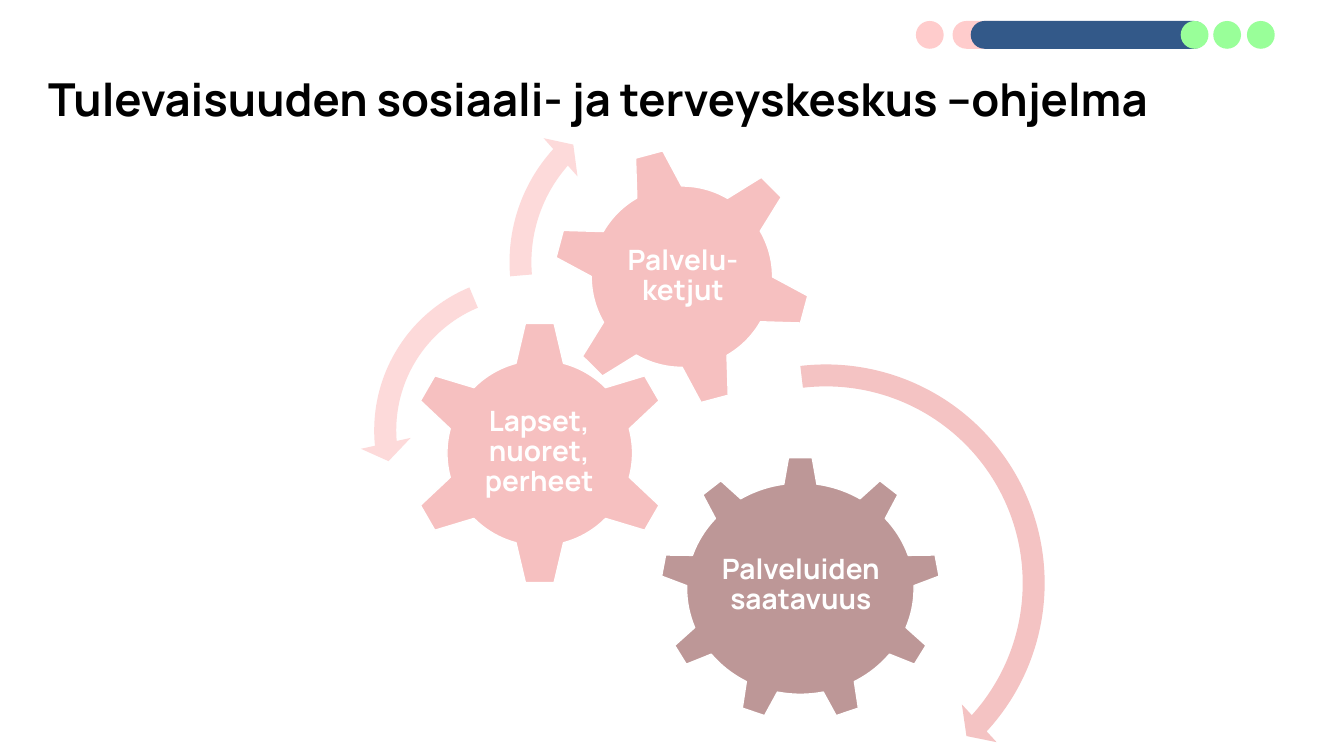
from dataclasses import dataclass

from pptx import Presentation
from pptx.dml.color import RGBColor
from pptx.enum.shapes import MSO_SHAPE
from pptx.enum.text import MSO_ANCHOR, PP_ALIGN
from pptx.shapes.autoshape import Shape
from pptx.slide import Slide
from pptx.util import Inches, Length, Pt

CELL = Inches(0.1)
COLUMNS, ROWS = 133.33, 75
FONT = "Manrope"
COLORS = {
    "white": "FFFFFF",
    "black": "000000",
    "pink": "FFCCCC",
    "navy": "335989",
    "green": "99FF99",
    "gear": "F6C0C0",
    "dark gear": "BD9797",
    "arrow": "F4C3C3",
    "pale arrow": "FDDADA",
}


@dataclass(frozen=True)
class Area:
    """A rectangle in columns and rows of the slide grid."""

    column: float
    row: float
    columns: float
    rows: float

    def lengths(self) -> tuple[Length, ...]:
        """Return left, top, width and height."""
        cells = (self.column, self.row, self.columns, self.rows)
        return tuple(Length(round(cell * CELL)) for cell in cells)


@dataclass(frozen=True)
class Pill:
    """A round-ended piece of the header ornament."""

    column: float
    columns: float
    color: str


@dataclass(frozen=True)
class Gear:
    """A cogwheel with its caption."""

    kind: MSO_SHAPE
    area: Area
    color: str
    caption: str
    caption_area: Area
    rotation: float = 0


@dataclass(frozen=True)
class Arrow:
    """A curved arrow showing how a gear turns."""

    kind: MSO_SHAPE
    area: Area
    color: str
    adjustments: tuple[float, ...]


PILL_ROW, PILL_ROWS = 2.08, 2.76
PILLS = [
    Pill(94.5, 6, "pink"),
    Pill(96.3, 23.5, "navy"),
    *(Pill(column, PILL_ROWS, "green") for column in (117.13, 120.36, 123.7)),
    Pill(90.86, PILL_ROWS, "pink"),
]
GEARS = [
    Gear(MSO_SHAPE.GEAR_9, Area(65.5, 45.3, 27.8, 26.2), "dark gear",
         "Palveluiden saatavuus", Area(71, 51.4, 16.9, 13.4)),
    Gear(MSO_SHAPE.GEAR_6, Area(40.4, 31.8, 26.3, 26.3), "gear",
         "Lapset, nuoret, perheet", Area(47, 38.4, 13, 13)),
    Gear(MSO_SHAPE.GEAR_6, Area(54.8, 14.6, 25.7, 25.7), "gear",
         "Palvelu-ketjut", Area(60.5, 20.2, 14.5, 14.5), 345),
]
ARROWS = [
    Arrow(MSO_SHAPE.CIRCULAR_ARROW, Area(58.8, 34.7, 46.3, 46.3), "arrow",
          (0.047, 2.99, 25.473, 157.957, 0.055)),
    Arrow(MSO_SHAPE.LEFT_CIRCULAR_ARROW, Area(35.7, 25.9, 33.6, 33.6), "pale arrow",
          (0.065, 4.3, 104.891, 148.378, 0.075)),
    Arrow(MSO_SHAPE.CIRCULAR_ARROW, Area(49.1, 7.9, 36.2, 36.2), "pale arrow",
          (0.06, 3.941, 133.138, 105.082, 0.07)),
]
TITLE = "Tulevaisuuden sosiaali- ja terveyskeskus –ohjelma"
TITLE_AREA = Area(3.8, 5.2, 120.4, 7.8)


def rgb(color: str) -> RGBColor:
    """Look up a named colour."""
    return RGBColor.from_string(COLORS[color])


def add_figure(page: Slide, kind: MSO_SHAPE, area: Area, color: str) -> Shape:
    """Add a flat preset shape without an outline."""
    figure = page.shapes.add_shape(kind, *area.lengths())
    figure.shadow.inherit = False
    figure.fill.solid()
    figure.fill.fore_color.rgb = rgb(color)
    figure.line.fill.background()
    return figure


def add_text(page: Slide, area: Area, text: str, size: float, color: str,
             anchor: MSO_ANCHOR, alignment: PP_ALIGN) -> Shape:
    """Add a wrapped bold text box."""
    box = page.shapes.add_textbox(*area.lengths())
    frame = box.text_frame
    frame.word_wrap = True
    frame.vertical_anchor = anchor
    frame.text = text
    para = frame.paragraphs[0]
    para.alignment = alignment
    para.line_spacing = 0.9
    font = para.runs[0].font
    font.name, font.size, font.bold = FONT, Pt(size), True
    font.color.rgb = rgb(color)
    return box


def add_pill(page: Slide, pill: Pill) -> None:
    """Draw one piece of the header ornament."""
    area = Area(pill.column, PILL_ROW, pill.columns, PILL_ROWS)
    figure = add_figure(page, MSO_SHAPE.ROUNDED_RECTANGLE, area, pill.color)
    figure.adjustments[0] = 0.5


def add_gear(page: Slide, gear: Gear) -> None:
    """Draw a gear and its caption."""
    figure = add_figure(page, gear.kind, gear.area, gear.color)
    figure.rotation = gear.rotation
    figure.line.color.rgb = rgb("white")
    figure.line.width = Pt(1)
    box = add_text(page, gear.caption_area, gear.caption, 20, "white",
                   MSO_ANCHOR.MIDDLE, PP_ALIGN.CENTER)
    frame = box.text_frame
    frame.margin_left = frame.margin_right = Inches(0.03)
    frame.margin_top = frame.margin_bottom = Inches(0.03)


def add_arrow(page: Slide, arrow: Arrow) -> None:
    """Draw a curved arrow."""
    figure = add_figure(page, arrow.kind, arrow.area, arrow.color)
    for index, value in enumerate(arrow.adjustments):
        figure.adjustments[index] = value


def main() -> None:
    """Build and save the slide."""
    deck = Presentation()
    deck.slide_width = round(COLUMNS * CELL)
    deck.slide_height = ROWS * CELL
    page = deck.slides.add_slide(deck.slide_layouts[6])
    for pill in PILLS:
        add_pill(page, pill)
    for gear in GEARS:
        add_gear(page, gear)
    for arrow in ARROWS:
        add_arrow(page, arrow)
    add_text(page, TITLE_AREA, TITLE, 32.4, "black", MSO_ANCHOR.BOTTOM, PP_ALIGN.LEFT)
    deck.save("out.pptx")


if __name__ == "__main__":
    main()
